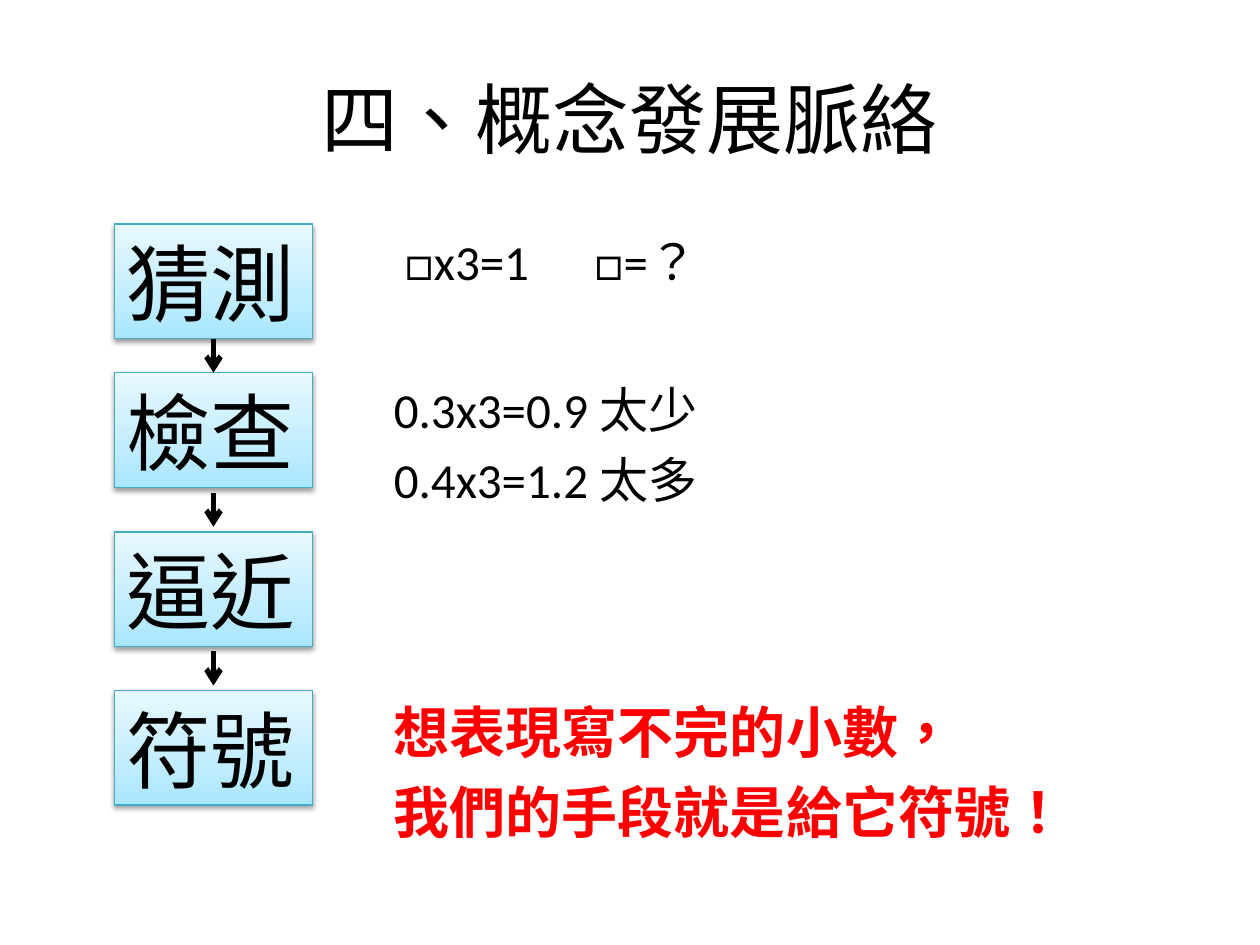
from dataclasses import dataclass
from itertools import pairwise

from pptx import Presentation
from pptx.dml.color import RGBColor
from pptx.enum.lang import MSO_LANGUAGE_ID as Lang
from pptx.enum.shapes import MSO_CONNECTOR as Connector, MSO_SHAPE as Shape
from pptx.enum.text import MSO_ANCHOR as Anchor, PP_ALIGN as Align
from pptx.oxml import parse_xml
from pptx.oxml.ns import nsdecls, qn
from pptx.util import Pt


@dataclass(frozen=True)
class Theme:
    latin: str = "Calibri"
    cjk: str = "Noto Sans CJK SC"
    ink: str = "000000"
    accent: str = "FF0000"
    border: str = "46AAC5"
    gradient: tuple = ((0, "A7E6FF"), (35, "C1EDFF"), (100, "E7F8FF"))
    title: int = 44
    step: int = 48
    note: int = 28
    conclusion: int = 32
    leading: float = 1.22


THEME = Theme()


def add_xml(parent, xml):
    tag, rest = xml[1:].split(">", 1) if not xml.endswith("/>") else (xml[1:-2], None)
    end = "/>" if rest is None else ">" + rest
    parent.append(parse_xml(f"<{tag} {nsdecls('a')}{end}"))


def write_lines(tf, lines, size, font=THEME.cjk, color=THEME.ink, bold=False,
                align=Align.LEFT, tab=None):
    """Write one paragraph per line, with an optional tab stop in points."""
    tf.word_wrap = True
    for i, text in enumerate(lines):
        p = tf.paragraphs[0] if i == 0 else tf.add_paragraph()
        p.alignment = align
        p.line_spacing = Pt(round(size * THEME.leading, 1))
        if i:
            p.space_before = Pt(round(size * 0.2, 1))
        if tab:
            add_xml(p._p.get_or_add_pPr(),
                    f'<a:tabLst><a:tab pos="{Pt(tab)}" algn="l"/></a:tabLst>')
        r = p.add_run()
        r.text = text
        r.font.size, r.font.bold, r.font.name = Pt(size), bold, font
        r.font.color.rgb = RGBColor.from_string(color)
        r.font.language_id = Lang.TRADITIONAL_CHINESE
        add_xml(r._r.get_or_add_rPr(), f'<a:ea typeface="{THEME.cjk}"/>')


def add_text(s, box, lines, size, anchor=Anchor.TOP, **style):
    tf = s.shapes.add_textbox(*map(Pt, box)).text_frame
    tf.vertical_anchor = anchor
    write_lines(tf, lines, size, **style)


def add_step(shapes, box, label):
    sp = shapes.add_shape(Shape.RECTANGLE, *map(Pt, box))
    stops = "".join(f'<a:gs pos="{pos * 1000}"><a:srgbClr val="{color}"/></a:gs>'
                    for pos, color in THEME.gradient)
    spPr = sp._element.spPr
    add_xml(spPr, f'<a:gradFill><a:gsLst>{stops}</a:gsLst>'
                  '<a:lin ang="16200000" scaled="0"/></a:gradFill>')
    sp.line.color.rgb = RGBColor.from_string(THEME.border)
    sp.line.width = Pt(0.75)
    add_xml(spPr, '<a:effectLst>'
                  f'<a:outerShdw blurRad="{Pt(3.1)}" dist="{Pt(1.6)}" dir="5400000" '
                  'rotWithShape="0"><a:srgbClr val="000000"><a:alpha val="38000"/>'
                  '</a:srgbClr></a:outerShdw></a:effectLst>')
    sp.text_frame.vertical_anchor = Anchor.TOP
    write_lines(sp.text_frame, [label], THEME.step)


def add_arrow(shapes, x, top, bottom):
    line = shapes.add_connector(Connector.STRAIGHT, Pt(x), Pt(top), Pt(x), Pt(bottom))
    line.line.color.rgb = RGBColor.from_string(THEME.ink)
    line.line.width = Pt(3)
    spPr = line._element.spPr
    add_xml(spPr.find(qn("a:ln")), '<a:tailEnd type="arrow"/>')
    add_xml(spPr, '<a:effectLst/>')


def add_flow(s, box, steps, arrow_length=19.5):
    """Stack (label, top) steps in the box, an arrow centred in each gap."""
    left, top, width, height = box
    shapes = s.shapes.add_group_shape().shapes
    for label, offset in steps:
        add_step(shapes, (left, top + offset, width, height), label)
    for (_, upper), (_, lower) in pairwise(steps):
        middle = top + (upper + height + lower) / 2
        add_arrow(shapes, left + width / 2,
                  middle - arrow_length / 2, middle + arrow_length / 2)


def main():
    prs = Presentation()
    prs.slide_width, prs.slide_height = Pt(720), Pt(540)
    s = prs.slides.add_slide(prs.slide_layouts[6])
    add_text(s, (36, 21.6, 648, 90), ["四、概念發展脈絡"], THEME.title,
             anchor=Anchor.MIDDLE, align=Align.CENTER)
    add_text(s, (218, 394.5, 453.6, 113), ["想表現寫不完的小數，", "我們的手段就是給它符號！"],
             THEME.conclusion, color=THEME.accent, bold=True)
    add_text(s, (218, 213, 453.6, 113), ["0.3x3=0.9 太少", "0.4x3=1.2 太多"],
             THEME.note, font=THEME.latin)
    add_flow(s, (65.5, 128, 113, 65.5),
             [("猜測", 0), ("檢查", 85), ("逼近", 176), ("符號", 266.5)])
    add_text(s, (224, 128, 453.6, 113), ["□x3=1\t□=？"], THEME.note,
             font=THEME.latin, tab=108.5)
    prs.save("out.pptx")


if __name__ == "__main__":
    main()
